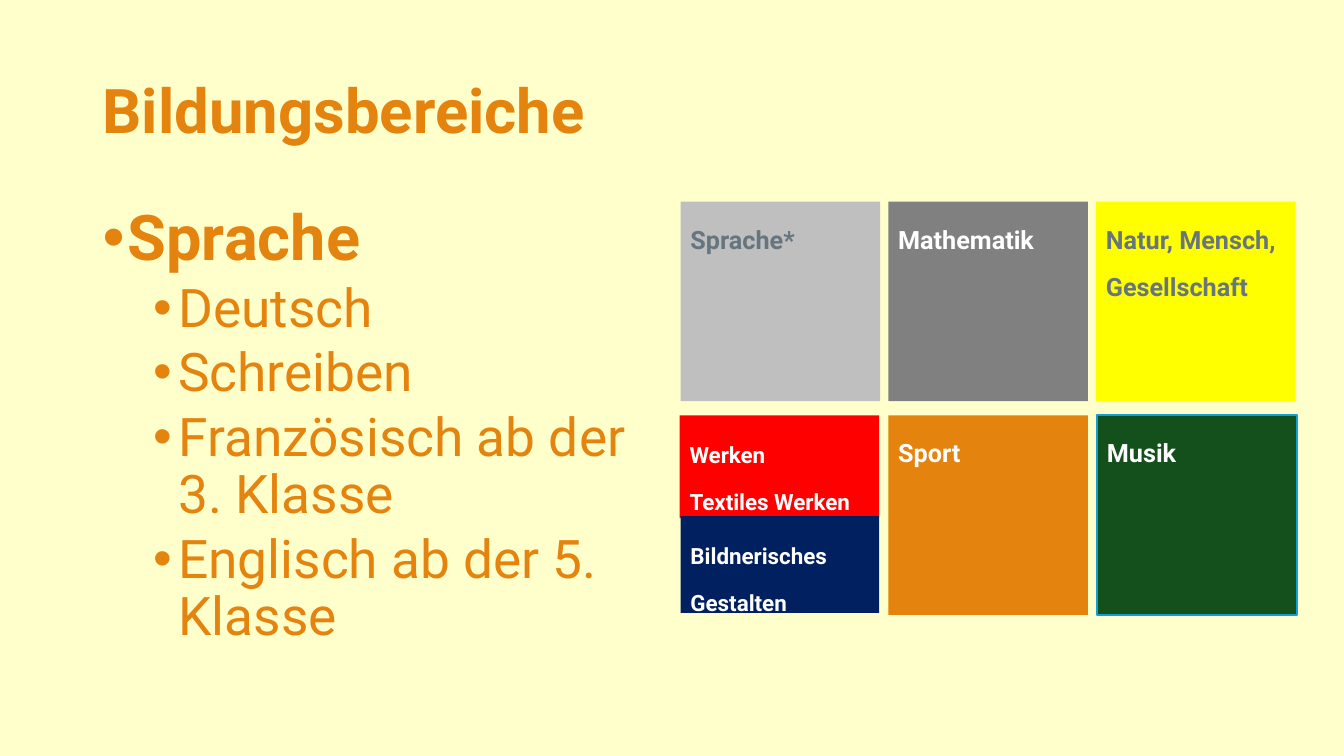
from dataclasses import dataclass

from lxml import etree
from pptx import Presentation
from pptx import util as u
from pptx.dml.color import RGBColor
from pptx.enum import shapes, text
from pptx.oxml import ns

PX = 9144
ORANGE = "E4830E"
WHITE = "FFFFFF"
SLATE = "67757E"
TILE_SIZE = 198


@dataclass(frozen=True)
class Box:
    left: int
    top: int
    width: int
    height: int


@dataclass(frozen=True)
class Style:
    size: int
    color: str
    bold: bool = True
    line_spacing: float | u.Pt = 0.9


@dataclass(frozen=True)
class Tile:
    lines: tuple[str, ...]
    box: Box
    fill: str
    color: str = WHITE
    size: int = 18
    outline: str | None = None


@dataclass(frozen=True)
class Bullet:
    words: str
    style: Style
    level: int = 0
    margin: int = 25
    space_before: int = 0


def square(left: int, top: int) -> Box:
    """Return the box of a full-size tile."""
    return Box(left, top, TILE_SIZE, TILE_SIZE)


HEADING = Style(45, ORANGE)
ENTRY = Style(38, ORANGE, bold=False)

BULLETS = [Bullet("Sprache", HEADING)] + [
    Bullet(words, ENTRY, level=1, margin=75, space_before=5)
    for words in (
        "Deutsch",
        "Schreiben",
        "Französisch ab der 3. Klasse",
        "Englisch ab der 5. Klasse",
    )
]

TILES = [
    Tile(("Sprache*",), square(675, 200), "BFBFBF", SLATE),
    Tile(("Mathematik",), square(881, 200), "808080"),
    Tile(("Natur, Mensch, Gesellschaft",), square(1087, 200), "FFFF00", SLATE),
    Tile(("Sport",), square(881, 412), ORANGE),
    Tile(("Musik",), square(1088, 412), "13501B", outline="0F9ED5"),
    Tile(("Werken", "Textiles Werken"), Box(674, 412, 198, 102), "FF0000", size=16),
    Tile(("Bildnerisches Gestalten",), Box(675, 512, 197, 96), "002060", size=16),
]


def rgb(value: str) -> RGBColor:
    """Turn a hex string into a colour."""
    return RGBColor.from_string(value)


def place(box: Box) -> tuple[int, int, int, int]:
    """Turn a box in px into EMU lengths."""
    return box.left * PX, box.top * PX, box.width * PX, box.height * PX


def write(para, words: str, style: Style) -> None:
    """Put one styled run of words into a paragraph."""
    para.add_run().text = words
    para.alignment = text.PP_ALIGN.LEFT
    para.line_spacing = style.line_spacing
    font = para.font
    font.name = "Roboto"
    font.size = u.Pt(style.size)
    font.bold = style.bold
    font.color.rgb = rgb(style.color)


def add_paragraph(frame, index: int):
    """Return the first paragraph of a frame, or a new one after it."""
    return frame.paragraphs[0] if index == 0 else frame.add_paragraph()


def add_text_frame(page, box: Box, anchor: text.MSO_ANCHOR):
    """Add a wrapping text box and return its frame."""
    frame = page.shapes.add_textbox(*place(box)).text_frame
    frame.word_wrap = True
    frame.vertical_anchor = anchor
    return frame


def add_bullet(para, bullet: Bullet) -> None:
    """Write a paragraph with a hanging bullet."""
    para.level = bullet.level
    para.space_before = u.Pt(bullet.space_before)
    properties = para._p.get_or_add_pPr()
    properties.set("marL", str(bullet.margin * PX))
    properties.set("indent", str(-25 * PX))
    etree.SubElement(properties, ns.qn("a:buFont"), typeface="Arial")
    etree.SubElement(properties, ns.qn("a:buChar"), char="•")
    write(para, bullet.words, bullet.style)


def add_tile(page, tile: Tile) -> None:
    """Draw a coloured subject tile."""
    shape = page.shapes.add_shape(shapes.MSO_SHAPE.RECTANGLE, *place(tile.box))
    shape.shadow.inherit = False
    shape.fill.solid()
    shape.fill.fore_color.rgb = rgb(tile.fill)
    if tile.outline:
        shape.line.color.rgb = rgb(tile.outline)
        shape.line.width = u.Pt(1.5)
    else:
        shape.line.fill.background()
    frame = shape.text_frame
    frame.word_wrap = True
    frame.vertical_anchor = text.MSO_ANCHOR.TOP
    style = Style(tile.size, tile.color, line_spacing=u.Pt(34))
    for index, words in enumerate(tile.lines):
        write(add_paragraph(frame, index), words, style)


def main() -> None:
    """Build the slide and save it."""
    deck = Presentation()
    deck.slide_width, deck.slide_height = 1333 * PX, 750 * PX
    page = deck.slides.add_slide(deck.slide_layouts[6])
    page.background.fill.solid()
    page.background.fill.fore_color.rgb = rgb("FFFFCC")

    title = add_text_frame(page, Box(92, 40, 995, 145), text.MSO_ANCHOR.MIDDLE)
    write(title.paragraphs[0], "Bildungsbereiche", Style(44, ORANGE))

    body = add_text_frame(page, Box(92, 200, 567, 476), text.MSO_ANCHOR.TOP)
    for index, bullet in enumerate(BULLETS):
        add_bullet(add_paragraph(body, index), bullet)

    for tile in TILES:
        add_tile(page, tile)
    deck.save("out.pptx")


if __name__ == "__main__":
    main()
